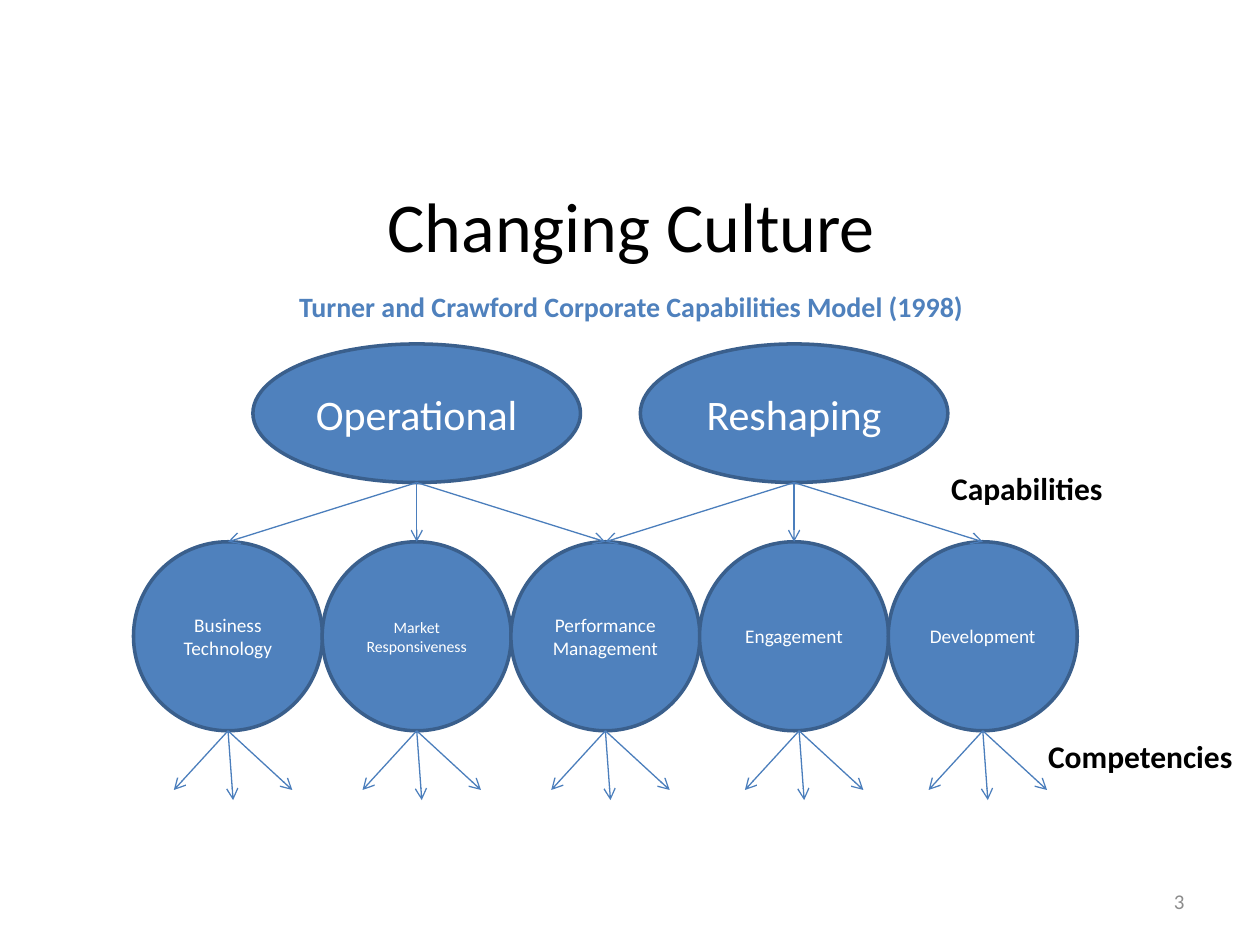
from dataclasses import dataclass

from lxml.etree import SubElement
from pptx import Presentation
from pptx.dml.color import RGBColor as RGB
from pptx.enum.shapes import MSO_CONNECTOR as Connector, MSO_SHAPE as Shape
from pptx.enum.text import MSO_ANCHOR as Anchor, PP_ALIGN as Align
from pptx.oxml.ns import qn
from pptx.util import Inches, Pt

TITLE = "Changing Culture"
SUBTITLE = "Turner and Crawford Corporate Capabilities Model (1998)"
PAGE_NUMBER = "3"

# name, width, positions of the competencies it leads to
CAPABILITIES = [
    ("Operational", 2.6, (0, 1, 2)),
    ("Reshaping", 2.44, (2, 3, 4)),
]


@dataclass(frozen=True)
class Theme:
    font = "Calibri"
    black = RGB.from_string("000000")
    white = RGB.from_string("FFFFFF")
    blue = RGB.from_string("4F81BD")
    outline = RGB.from_string("3A5F8C")
    arrow = RGB.from_string("4B7EBC")
    grey = RGB.from_string("8C8C8C")
    title = 40
    subtitle = 16
    capability = 24
    competency = 11
    small = 9
    label = 18
    number = 12


THEME = Theme()

# name, type size, sideways shift of the arrows below
COMPETENCIES = [
    ("Business Technology", THEME.competency, 0),
    ("Market Responsiveness", THEME.small, 0),
    ("Performance Management", THEME.competency, 0),
    ("Engagement", THEME.competency, 0.04),
    ("Development", THEME.competency, 0),
]

LABELS = [
    ("Capabilities", (7.45, 3.67, 1.41, 0.4), False),
    ("Competencies", (8.22, 5.8, 2.13, 0.4), True),
]

CAPABILITY_TOP, CAPABILITY_HEIGHT = 2.73, 1.1
CIRCLE_TOP, CIRCLE_SIZE = 4.3, 1.5
FIRST_CENTER, CENTER_STEP = 1.81, 1.4975
FAN = [(0.04, 0.55), (-0.43, 0.47), (0.51, 0.47)]


def write(frame, words, size, color, align=Align.CENTER, anchor=Anchor.MIDDLE,
          bold=False, wrap=True):
    frame.word_wrap = wrap
    frame.vertical_anchor = anchor
    line = frame.paragraphs[0]
    line.alignment = align
    run = line.add_run()
    run.text = words
    run.font.name = THEME.font
    run.font.size = Pt(size)
    run.font.bold = bold
    run.font.color.rgb = color


def add_text(slide, box, *args, **style):
    write(slide.shapes.add_textbox(*map(Inches, box)).text_frame, *args, **style)


def add_ellipse(slide, box, words, size):
    ellipse = slide.shapes.add_shape(Shape.OVAL, *map(Inches, box))
    ellipse.shadow.inherit = False
    ellipse.fill.solid()
    ellipse.fill.fore_color.rgb = THEME.blue
    ellipse.line.color.rgb = THEME.outline
    ellipse.line.width = Pt(2)
    write(ellipse.text_frame, words, size, THEME.white)


def add_arrow(slide, *ends):
    arrow = slide.shapes.add_connector(Connector.STRAIGHT, *map(Inches, ends))
    arrow.line.color.rgb = THEME.arrow
    arrow.line.width = Pt(0.75)
    SubElement(arrow.line._get_or_add_ln(), qn("a:tailEnd"), type="arrow")
    SubElement(arrow._element.spPr, qn("a:effectLst"))


def build():
    deck = Presentation()
    deck.slide_width, deck.slide_height = Inches(10), Inches(7.5)
    slide = deck.slides.add_slide(deck.slide_layouts[5])

    title = slide.shapes.title
    title.left, title.top, title.width, title.height = map(Inches, (0.51, 1.16, 9, 1.25))
    write(title.text_frame, TITLE, THEME.title, THEME.black)
    add_text(slide, (0.51, 2.25, 9, 0.39), SUBTITLE, THEME.subtitle, THEME.blue,
             anchor=Anchor.TOP, bold=True)
    add_text(slide, (7.17, 6.95, 2.33, 0.4), PAGE_NUMBER, THEME.number, THEME.grey,
             align=Align.RIGHT)

    centers = [FIRST_CENTER + i * CENTER_STEP for i in range(len(COMPETENCIES))]
    capability_bottom = CAPABILITY_TOP + CAPABILITY_HEIGHT
    circle_bottom = CIRCLE_TOP + CIRCLE_SIZE

    for name, width, targets in CAPABILITIES:
        middle = centers[targets[1]]
        add_ellipse(slide, (middle - width / 2, CAPABILITY_TOP, width, CAPABILITY_HEIGHT),
                    name, THEME.capability)

    for center, (name, size, _) in zip(centers, COMPETENCIES):
        add_ellipse(slide, (center - CIRCLE_SIZE / 2, CIRCLE_TOP, CIRCLE_SIZE, CIRCLE_SIZE),
                    name, size)

    for center, (_, _, shift) in zip(centers, COMPETENCIES):
        start = center + shift
        for dx, dy in FAN:
            add_arrow(slide, start, circle_bottom, start + dx, circle_bottom + dy)

    for _, _, targets in CAPABILITIES:
        for target in targets:
            add_arrow(slide, centers[targets[1]], capability_bottom,
                      centers[target], CIRCLE_TOP)

    for words, box, wrap in LABELS:
        add_text(slide, box, words, THEME.label, THEME.black, align=Align.LEFT,
                 anchor=Anchor.TOP, bold=True, wrap=wrap)

    deck.save("out.pptx")


if __name__ == "__main__":
    build()
